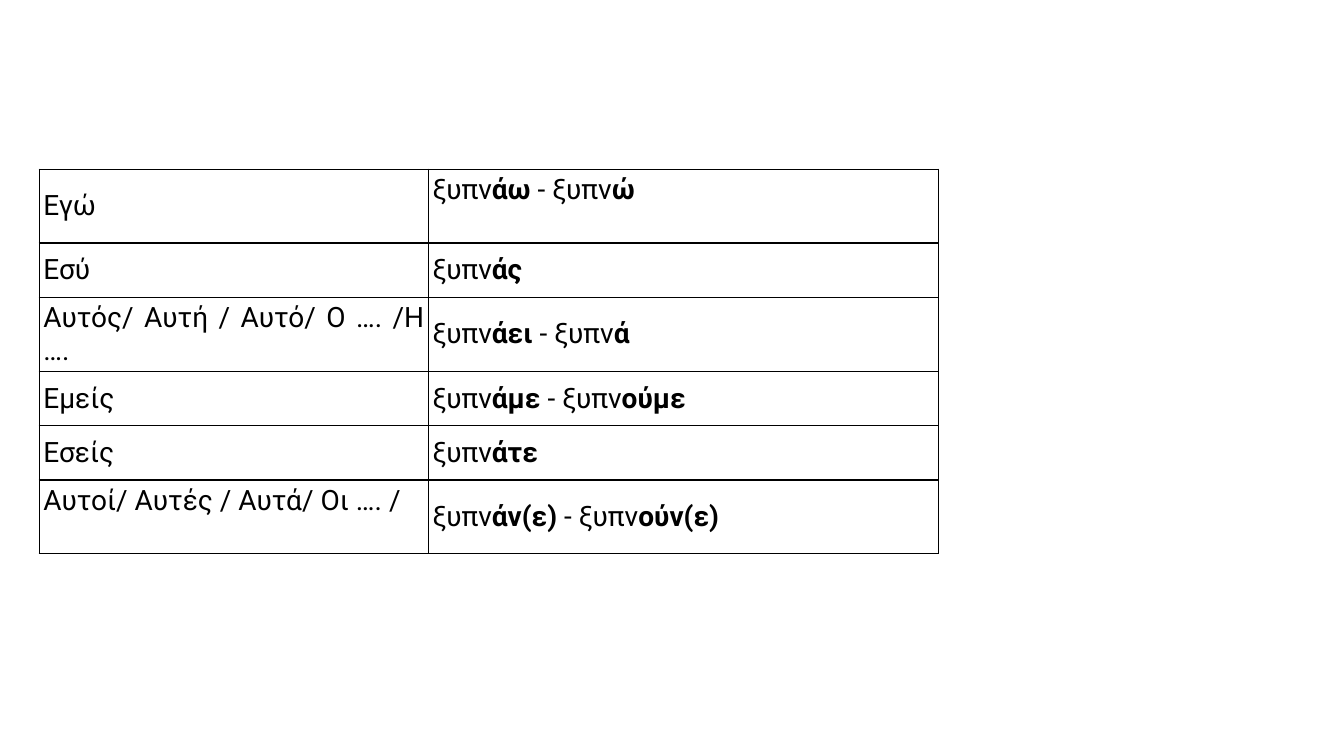
from lxml.etree import SubElement
from pptx import Presentation
from pptx.dml.color import RGBColor
from pptx.enum.text import MSO_ANCHOR as Anchor, PP_ALIGN as Align
from pptx.oxml.ns import qn
from pptx.util import Inches, Pt

STEM = "ξυπν"
# Pronoun, then the endings of each verb form
CONJUGATION = [
    ("Εγώ", ["άω", "ώ"]),
    ("Εσύ", ["άς"]),
    ("Αυτός/ Αυτή / Αυτό/ Ο …. /Η ….", ["άει", "ά"]),
    ("Εμείς", ["άμε", "ούμε"]),
    ("Εσείς", ["άτε"]),
    ("Αυτοί/ Αυτές / Αυτά/ Οι …. /", ["άν(ε)", "ούν(ε)"]),
]
COLORS = {"ink": "000000", "paper": "FFFFFF"}
FONT, SIZE = "Roboto", Pt(20)
COLUMNS = [3.86, 5.06]
SINGLE, DOUBLE = 0.54, 0.73
ROWS = [DOUBLE, SINGLE, DOUBLE, SINGLE, SINGLE, DOUBLE]
LEFT, TOP, INSET = 0.39, 1.68, Inches(0.04)
TOP_CELLS = {(0, 1), (5, 0)}


def add_borders(cell):
    properties = cell._tc.get_or_add_tcPr()
    for side in ("a:lnL", "a:lnR", "a:lnT", "a:lnB"):
        line = SubElement(properties, qn(side), w=str(Pt(1)))
        fill = SubElement(line, qn("a:solidFill"))
        SubElement(fill, qn("a:srgbClr"), val=COLORS["ink"])


def fill_cell(cell, spans, anchor):
    """Write (text, bold) spans into a bordered cell."""
    cell.margin_left = cell.margin_right = INSET
    cell.margin_top = cell.margin_bottom = INSET
    cell.vertical_anchor = anchor
    add_borders(cell)
    cell.fill.background()
    para = cell.text_frame.paragraphs[0]
    para.alignment = Align.JUSTIFY
    for text, bold in spans:
        span = para.add_run()
        span.text = text
        span.font.name, span.font.size, span.font.bold = FONT, SIZE, bold
        span.font.color.rgb = RGBColor.from_string(COLORS["ink"])


def verb_spans(endings):
    spans = []
    for index, ending in enumerate(endings):
        spans += [(" - " + STEM if index else STEM, False), (ending, True)]
    return spans


def main():
    deck = Presentation()
    deck.slide_width, deck.slide_height = Inches(13.33), Inches(7.5)
    page = deck.slides.add_slide(deck.slide_layouts[6])
    page.background.fill.solid()
    page.background.fill.fore_color.rgb = RGBColor.from_string(COLORS["paper"])

    frame = page.shapes.add_table(
        len(ROWS), len(COLUMNS), Inches(LEFT), Inches(TOP),
        Inches(sum(COLUMNS)), Inches(sum(ROWS)))
    table = frame.table
    table.first_row = table.horz_banding = False
    for column, width in zip(table.columns, COLUMNS):
        column.width = Inches(width)
    for row, height in zip(table.rows, ROWS):
        row.height = Inches(height)

    for r, (pronoun, endings) in enumerate(CONJUGATION):
        for c, spans in enumerate([[(pronoun, False)], verb_spans(endings)]):
            anchor = Anchor.TOP if (r, c) in TOP_CELLS else Anchor.MIDDLE
            fill_cell(table.cell(r, c), spans, anchor)

    deck.save("out.pptx")


if __name__ == "__main__":
    main()
